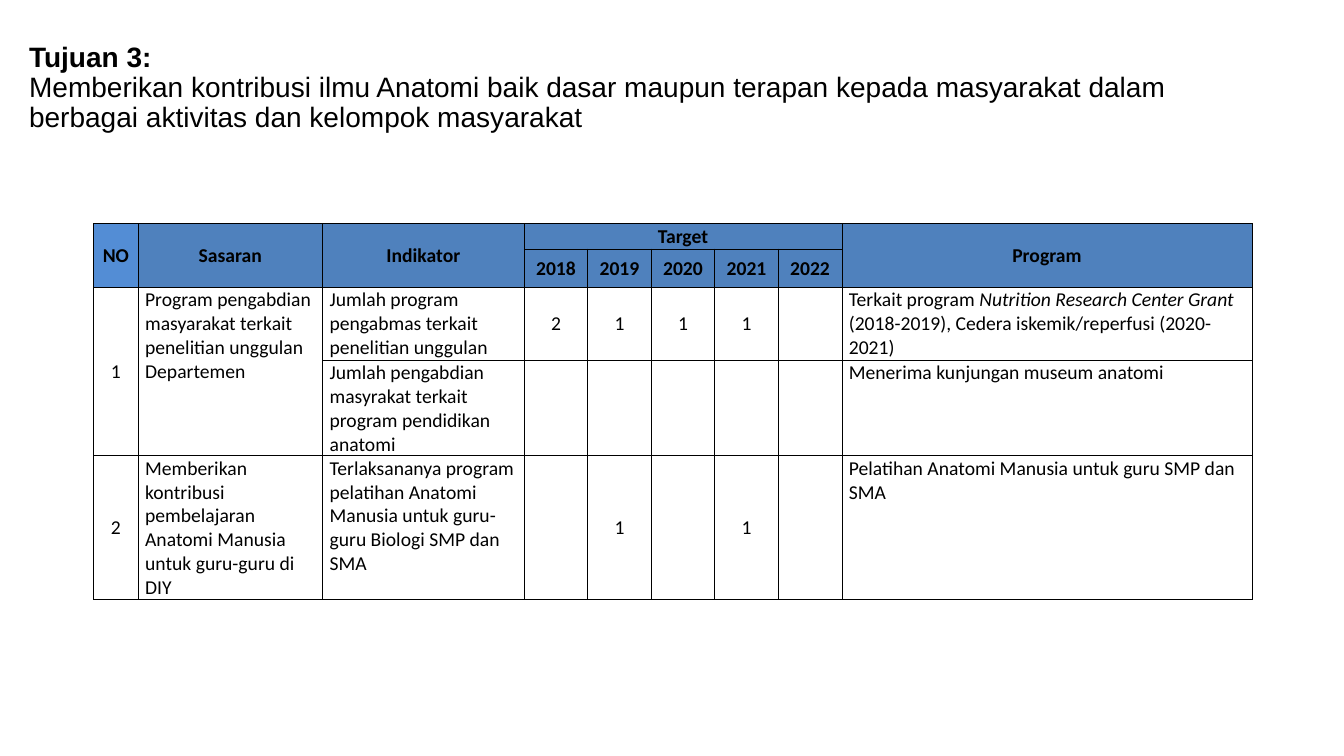
from dataclasses import dataclass
from itertools import product

from lxml.etree import SubElement
from pptx import Presentation
from pptx.dml.color import RGBColor
from pptx.enum.text import MSO_ANCHOR as Anchor, PP_ALIGN as Align
from pptx.oxml.ns import qn
from pptx.util import Inches, Pt

BLACK, HEADER_BLUE, NUMBER_BLUE = "000000", "4F81BD", "538DD5"
COLUMN_WIDTHS = [0.44, 1.83, 2] + [0.63] * 5 + [4.07]
ROW_HEIGHTS = [0.25, 0.38, 0.72, 0.95, 1.43]
YEARS = range(2018, 2023)
SASARAN, INDIKATOR, FIRST_YEAR, PROGRAM = 1, 2, 3, 8
TEXT_COLUMNS = (SASARAN, INDIKATOR, PROGRAM)
HEADER_ROWS = 2


@dataclass
class Run:
    text: str
    bold: bool = False
    italic: bool = False


@dataclass
class Entry:
    row: int
    column: int
    runs: list[Run]
    rows: int = 1
    columns: int = 1


def color(value: str) -> RGBColor:
    return RGBColor.from_string(value)


def write_run(paragraph, part: Run, size: float, face: str) -> None:
    run = paragraph.add_run()
    run.text = part.text
    font_format = {"name": face, "size": Pt(size), "bold": part.bold, "italic": part.italic}
    for attribute, value in font_format.items():
        setattr(run.font, attribute, value)
    run.font.color.rgb = color(BLACK)


def style_cell(cell, row: int, column: int) -> None:
    is_text = row >= HEADER_ROWS and column in TEXT_COLUMNS
    cell_format = {
        "margin_left": Inches(0.01),
        "margin_right": Inches(0.01),
        "margin_top": Inches(0.01),
        "margin_bottom": 0,
        "vertical_anchor": Anchor.TOP if is_text else Anchor.MIDDLE,
    }
    for attribute, value in cell_format.items():
        setattr(cell, attribute, value)

    # Thin black border on each side
    properties = cell._tc.get_or_add_tcPr()
    for side in ("lnL", "lnR", "lnT", "lnB"):
        line = SubElement(properties, qn(f"a:{side}"), w=str(Pt(0.5)))
        SubElement(SubElement(line, qn("a:solidFill")), qn("a:srgbClr"), val=BLACK)

    if row < HEADER_ROWS:
        cell.fill.solid()
        cell.fill.fore_color.rgb = color(HEADER_BLUE if column else NUMBER_BLUE)
    else:
        cell.fill.background()

    paragraph = cell.text_frame.paragraphs[0]
    paragraph.font.size = Pt(14)
    if is_text:
        paragraph._p.get_or_add_pPr().set("marL", str(Inches(0.06)))
    else:
        paragraph.alignment = Align.CENTER


def write_entry(table, entry: Entry) -> None:
    cell = table.cell(entry.row, entry.column)
    if entry.rows > 1 or entry.columns > 1:
        cell.merge(table.cell(entry.row + entry.rows - 1, entry.column + entry.columns - 1))
    for part in entry.runs:
        write_run(cell.text_frame.paragraphs[0], part, 14, "Calibri")


def header(row: int, column: int, text: str, rows: int = 1, columns: int = 1) -> Entry:
    return Entry(row, column, [Run(text, bold=True)], rows, columns)


def body(row: int, column: int, text: str, rows: int = 1) -> Entry:
    return Entry(row, column, [Run(text)], rows)


def target(row: int, year: int, count: int) -> Entry:
    return body(row, FIRST_YEAR + year - YEARS[0], str(count))


ENTRIES = [
    # Header
    header(0, 0, "NO", rows=2),
    header(0, SASARAN, "Sasaran", rows=2),
    header(0, INDIKATOR, "Indikator", rows=2),
    header(0, FIRST_YEAR, "Target", columns=len(YEARS)),
    header(0, PROGRAM, "Program", rows=2),
    *(header(1, FIRST_YEAR + i, str(year)) for i, year in enumerate(YEARS)),
    # Sasaran 1
    body(2, 0, "1", rows=2),
    body(2, SASARAN, "Program pengabdian masyarakat terkait penelitian unggulan Departemen", rows=2),
    body(2, INDIKATOR, "Jumlah program pengabmas terkait penelitian unggulan"),
    target(2, 2018, 2),
    *(target(2, year, 1) for year in (2019, 2020, 2021)),
    Entry(2, PROGRAM, [
        Run("Terkait program "),
        Run("Nutrition Research Center Grant", italic=True),
        Run(" (2018-2019), Cedera iskemik/reperfusi (2020-2021)"),
    ]),
    body(3, INDIKATOR, "Jumlah pengabdian masyrakat terkait program pendidikan anatomi"),
    body(3, PROGRAM, "Menerima kunjungan museum anatomi"),
    # Sasaran 2
    body(4, 0, "2"),
    body(4, SASARAN, "Memberikan kontribusi pembelajaran Anatomi Manusia untuk guru-guru di DIY"),
    body(4, INDIKATOR, "Terlaksananya program pelatihan Anatomi Manusia untuk guru-guru Biologi SMP dan SMA"),
    *(target(4, year, 1) for year in (2019, 2021)),
    body(4, PROGRAM, "Pelatihan Anatomi Manusia untuk guru SMP dan SMA"),
]


def add_title(slide) -> None:
    title = slide.shapes.add_textbox(Inches(0.19), Inches(0.15), Inches(11.96), Inches(1.45))
    frame = title.text_frame
    frame.word_wrap = True
    frame.vertical_anchor = Anchor.MIDDLE
    paragraph = frame.paragraphs[0]
    paragraph.line_spacing = 0.9
    write_run(paragraph, Run("Tujuan 3:", bold=True), 20, "Arial")
    paragraph.add_line_break()
    write_run(paragraph, Run(
        "Memberikan kontribusi ilmu Anatomi baik dasar maupun terapan kepada "
        "masyarakat dalam berbagai aktivitas dan kelompok masyarakat"), 20, "Arial")


def add_target_table(slide) -> None:
    table = slide.shapes.add_table(
        len(ROW_HEIGHTS), len(COLUMN_WIDTHS), Inches(0.93), Inches(2.22),
        Inches(sum(COLUMN_WIDTHS)), Inches(sum(ROW_HEIGHTS))).table
    table.first_row = table.horz_banding = False
    for column, width in zip(table.columns, COLUMN_WIDTHS):
        column.width = Inches(width)
    for row, height in zip(table.rows, ROW_HEIGHTS):
        row.height = Inches(height)
    for row, column in product(range(len(ROW_HEIGHTS)), range(len(COLUMN_WIDTHS))):
        style_cell(table.cell(row, column), row, column)
    for entry in ENTRIES:
        write_entry(table, entry)


def main() -> None:
    presentation = Presentation()
    presentation.slide_width, presentation.slide_height = Inches(13.33), Inches(7.5)
    slide = presentation.slides.add_slide(presentation.slide_layouts[6])
    add_title(slide)
    add_target_table(slide)
    presentation.save("out.pptx")


if __name__ == "__main__":
    main()
